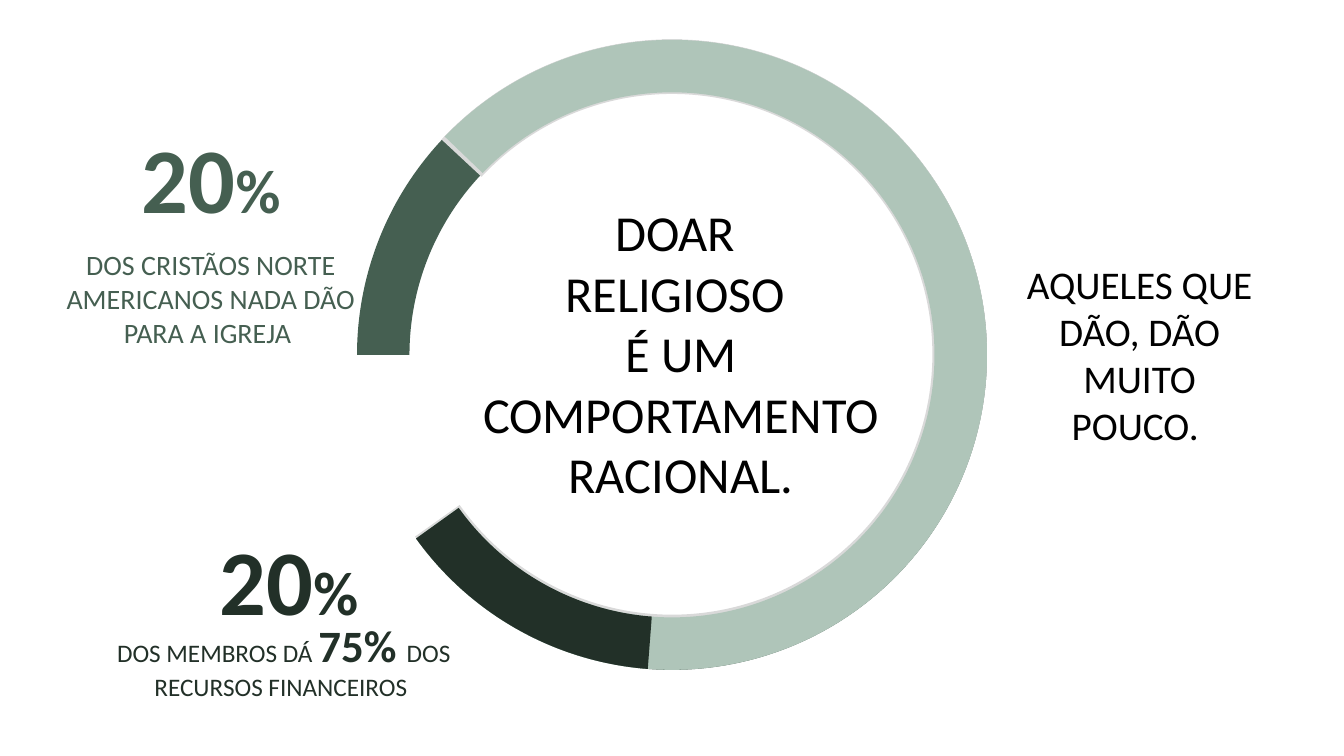
from dataclasses import dataclass

import pptx
import pptx.dml.color
import pptx.enum.shapes
import pptx.enum.text
import pptx.util

Pt = pptx.util.Pt
ALIGN = pptx.enum.text.PP_ALIGN

FONT = "Calibri"
GREEN, DARK, PALE, GRAY, BLACK = "455F51", "223028", "AFC5B9", "D9D9D9", "000000"
RING_LEFT, RING_SIZE = 255, 450
ADJUSTMENT_PER_DEGREE = 0.6


@dataclass
class Arc:
    start: float
    end: float
    thickness: float
    top: float
    color: str


@dataclass
class Span:
    text: str
    size: float
    bold: bool = False


@dataclass
class Label:
    left: float
    top: float
    width: float
    height: float
    color: str
    spans: list[Span]
    wrap: bool = True


def rgb(color: str) -> pptx.dml.color.RGBColor:
    return pptx.dml.color.RGBColor.from_string(color)


def draw_arc(page: pptx.slide.Slide, arc: Arc) -> None:
    shape = page.shapes.add_shape(
        pptx.enum.shapes.MSO_SHAPE.BLOCK_ARC,
        Pt(RING_LEFT), Pt(arc.top), Pt(RING_SIZE), Pt(RING_SIZE))
    shape.adjustments[0] = arc.start * ADJUSTMENT_PER_DEGREE
    shape.adjustments[1] = arc.end * ADJUSTMENT_PER_DEGREE
    shape.adjustments[2] = arc.thickness
    shape.fill.solid()
    shape.fill.fore_color.rgb = rgb(arc.color)
    shape.line.fill.background()
    shape.shadow.inherit = False


def draw_label(page: pptx.slide.Slide, label: Label) -> None:
    box = page.shapes.add_textbox(
        Pt(label.left), Pt(label.top), Pt(label.width), Pt(label.height))
    frame = box.text_frame
    frame.word_wrap = label.wrap
    frame.auto_size = pptx.enum.text.MSO_AUTO_SIZE.SHAPE_TO_FIT_TEXT
    para = frame.paragraphs[0]
    para.alignment = ALIGN.CENTER if label.wrap else ALIGN.LEFT
    for span in label.spans:
        for index, line in enumerate(span.text.split("\n")):
            if index:
                para.add_line_break()
            run = para.add_run()
            run.text = line
            run.font.name = FONT
            run.font.size = Pt(span.size)
            run.font.bold = span.bold
            run.font.color.rgb = rgb(label.color)


PERCENT = [Span("20", 66, True), Span("%", 44, True)]

ARCS = [
    Arc(180, 144.34, 0.0833, 28.5, GREEN),
    Arc(222.99, 144.65, 0.0867, 28.1, GRAY),
    Arc(223.85, 144.34, 0.0833, 28.5, PALE),
    Arc(94.41, 144.34, 0.0833, 28.5, DARK),
]

LABELS = [
    Label(719.3, 182.2, 189.4, 143.3, BLACK,
          [Span("AQUELES QUE DÃO, DÃO MUITO POUCO. ", 28)]),
    Label(39.6, 173.5, 221.8, 80, GREEN,
          [Span("DOS CRISTÃOS NORTE AMERICANOS NADA DÃO PARA A IGREJA ", 20)]),
    Label(94.3, 82.8, 139.7, 87.1, GREEN, PERCENT, wrap=False),
    Label(149.8, 370.1, 139.7, 87.1, DARK, PERCENT, wrap=False),
    Label(72.7, 437.8, 260, 67.7, DARK,
          [Span("DOS MEMBROS DÁ ", 18), Span("75% ", 32, True),
           Span("DOS RECURSOS FINANCEIROS ", 18)]),
    Label(333.4, 140.4, 306, 225.4, BLACK,
          [Span("DOAR \nRELIGIOSO \nÉ UM COMPORTAMENTO RACIONAL.", 36)]),
]


def main() -> None:
    deck = pptx.Presentation()
    deck.slide_width, deck.slide_height = Pt(960), Pt(540)
    page = deck.slides.add_slide(deck.slide_layouts[6])
    for arc in ARCS:
        draw_arc(page, arc)
    for label in LABELS:
        draw_label(page, label)
    deck.save("out.pptx")


if __name__ == "__main__":
    main()
